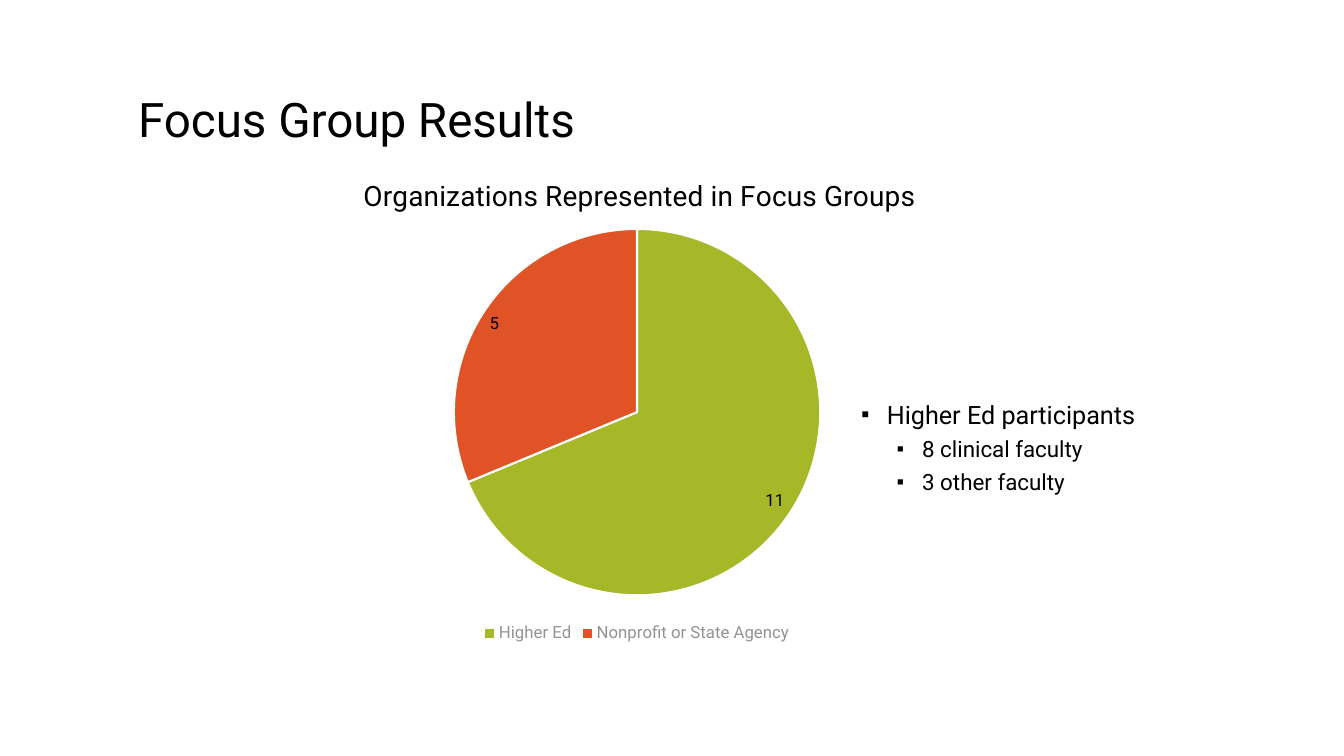
"""Build the focus group results slide."""
from dataclasses import dataclass

from lxml import etree
from pptx import Presentation
from pptx.chart.data import CategoryChartData
from pptx.dml.color import RGBColor
from pptx.enum.chart import XL_CHART_TYPE, XL_LABEL_POSITION, XL_LEGEND_POSITION
from pptx.enum.text import MSO_ANCHOR
from pptx.oxml import parse_xml
from pptx.oxml.ns import nsdecls, qn
from pptx.slide import Slide
from pptx.util import Cm, Pt

PIE = XL_CHART_TYPE.PIE
INSIDE = XL_LABEL_POSITION.INSIDE_END
BELOW = XL_LEGEND_POSITION.BOTTOM
TOP, LOW = MSO_ANCHOR.TOP, MSO_ANCHOR.BOTTOM
FACE = "Roboto"
HUES = {"ink": "000000", "grey": "939393", "white": "FFFFFF",
        "green": "A6B727", "red": "DF5327"}


@dataclass
class Line:
    """One paragraph; level 0 carries no bullet."""
    text: str
    size: int
    space: float
    level: int = 0
    gap: int = 0


@dataclass
class Slice:
    """One pie slice."""
    name: str
    value: int
    hue: str


@dataclass
class Box:
    """A text box with its place in centimetres."""
    place: tuple[float, float, float, float]
    anchor: MSO_ANCHOR
    lines: list[Line]


BOXES = [
    Box((3.23, 0.51, 28.96, 3.33), LOW, [Line("Focus Group Results", 34, 0.9)]),
    Box((20.45, 10.08, 9.25, 2.67), TOP, [
        Line("Higher Ed participants", 18, 0.8, 1),
        Line("8 clinical faculty", 16, 0.8, 2, 8),
        Line("3 other faculty", 16, 0.8, 2, 8),
    ]),
]
SLICES = [Slice("Higher Ed", 11, "green"),
          Slice("Nonprofit or State Agency", 5, "red")]


def color(hue: str) -> RGBColor:
    """Look up a named colour."""
    return RGBColor.from_string(HUES[hue])


def style(font, size: int, hue: str = "ink") -> None:
    """Set face, size and colour of a font."""
    font.name = FACE
    font.size = Pt(size)
    font.bold = False
    font.color.rgb = color(hue)


def bullet(para, level: int) -> None:
    """Give a paragraph a square bullet and a hanging indent."""
    para.level = level
    props = para._p.get_or_add_pPr()
    props.set("marL", str(Cm(0.76 + 0.89 * level)))
    props.set("indent", str(Cm(-0.64)))
    etree.SubElement(props, qn("a:buSzPct")).set("val", "80000")
    etree.SubElement(props, qn("a:buFont")).set("typeface", FACE)
    etree.SubElement(props, qn("a:buChar")).set("char", "▪")


def add_box(slide: Slide, box: Box) -> None:
    """Draw a text box and its lines."""
    frame = slide.shapes.add_textbox(*map(Cm, box.place)).text_frame
    frame.word_wrap = True
    frame.vertical_anchor = box.anchor
    frame.text = "\n".join(line.text for line in box.lines)
    for para, line in zip(frame.paragraphs, box.lines):
        if line.level:
            bullet(para, line.level)
        para.line_spacing = line.space
        para.space_before = Pt(line.gap)
        style(para.runs[0].font, line.size)


def layout(**parts: float):
    """Make a manual chart layout from fractions of the chart."""
    inner = '<c:layoutTarget val="inner"/>' if "w" in parts else ""
    modes = "".join(f'<c:{key}Mode val="edge"/>' for key in "xy")
    sizes = "".join(f'<c:{key} val="{val}"/>' for key, val in parts.items())
    return parse_xml(f'<c:layout {nsdecls("c")}><c:manualLayout>{inner}{modes}'
                     f'{sizes}</c:manualLayout></c:layout>')


def place(node, **parts: float) -> None:
    """Replace the layout of a chart part."""
    for old in node.findall(qn("c:layout")):
        node.remove(old)
    text = node.find(qn("c:tx"))
    node.insert(0 if text is None else 1, layout(**parts))


def add_pie(slide: Slide) -> None:
    """Draw the pie of organizations."""
    data = CategoryChartData()
    data.categories = [part.name for part in SLICES]
    data.add_series("Series 1", [part.value for part in SLICES])
    spot = map(Cm, (6.02, 3.84, 20.07, 12.47))
    chart = slide.shapes.add_chart(PIE, *spot, data).chart
    style(chart.font, 10)

    chart.has_title = True
    title = chart.chart_title
    title.include_in_layout = False
    title.text_frame.text = "Organizations Represented in Focus Groups"
    style(title.text_frame.paragraphs[0].runs[0].font, 20)
    place(title._element, x=0.15, y=0.04)

    chart.has_legend = True
    chart.legend.position = BELOW
    chart.legend.include_in_layout = False
    style(chart.legend.font, 12, "grey")

    plot = chart.plots[0]
    plot.vary_by_categories = True
    place(chart._chartSpace.chart.plotArea, x=0.27, y=0.15, w=0.46, h=0.75)
    series = plot.series[0]
    labels = series.data_labels
    labels.show_value = True
    labels.show_percentage = False
    labels.position = INSIDE
    style(labels.font, 12)
    for index, part in enumerate(SLICES):
        form = series.points[index].format
        form.fill.solid()
        form.fill.fore_color.rgb = color(part.hue)
        form.line.color.rgb = color("white")
        form.line.width = Pt(1.5)


def main() -> None:
    """Build and save the deck."""
    deck = Presentation()
    deck.slide_width, deck.slide_height = Cm(33.87), Cm(19.05)
    slide = deck.slides.add_slide(deck.slide_layouts[6])
    for box in BOXES:
        add_box(slide, box)
    add_pie(slide)
    deck.save("out.pptx")


if __name__ == "__main__":
    main()
